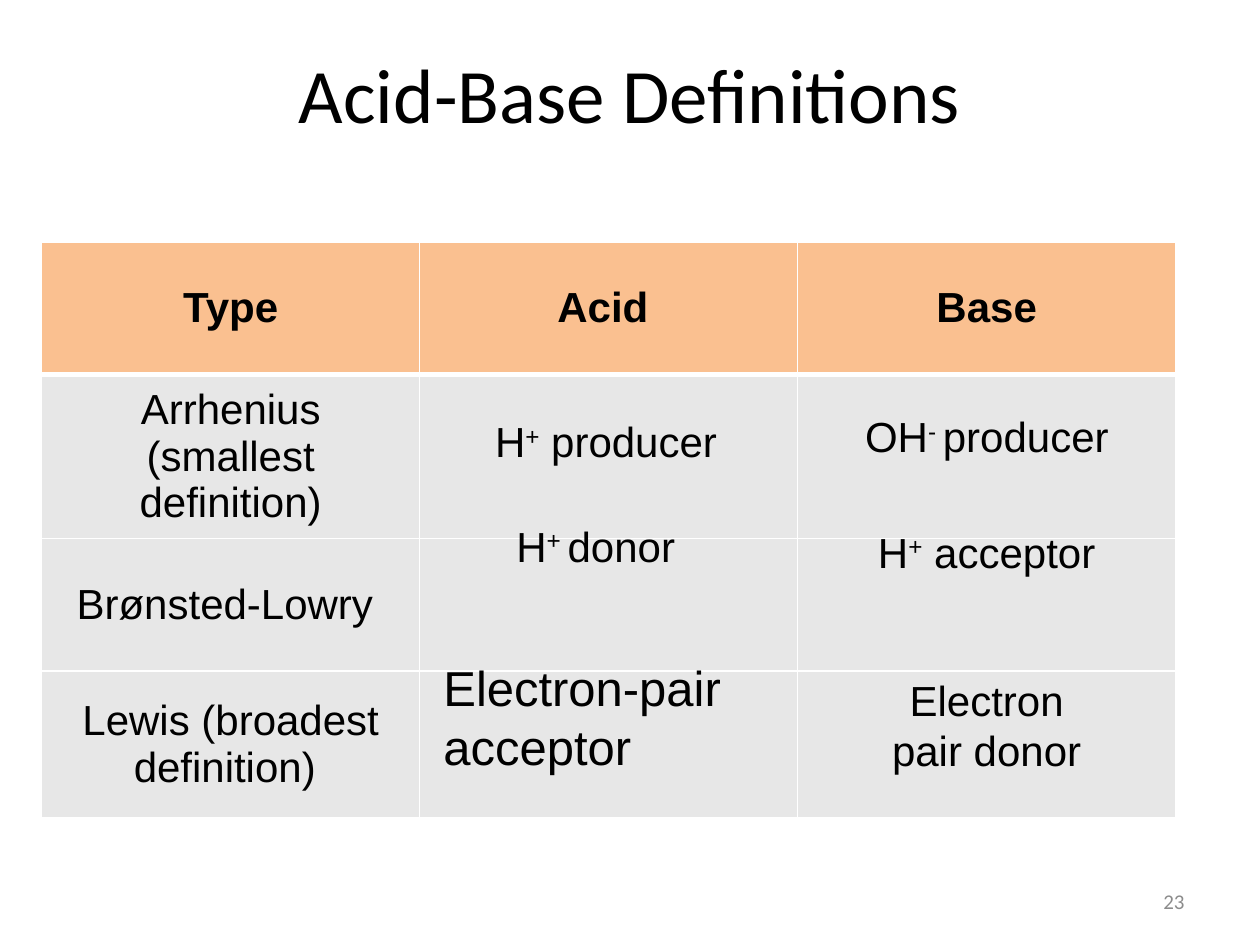
from lxml.etree import SubElement
from pptx import Presentation
from pptx.dml.color import RGBColor as RGB
from pptx.enum.text import MSO_ANCHOR as ANCHOR, PP_ALIGN as ALIGN
from pptx.oxml.ns import qn
from pptx.util import Cm, Pt

COLORS = {
    "text": "000000",
    "header": "FAC090",
    "body": "E7E7E7",
    "border": "FFFFFF",
    "number": "8C8C8C",
}
HEADERS = ["Type", "Acid ", "Base"]
TYPES = ["Arrhenius (smallest definition)", "Brønsted-Lowry ",
         "Lewis (broadest definition) "]
COL_W = 7.62
ROW_HEIGHTS = [2.67, 2.67, 2.67, 2.97]

# Text, (left, top, width, height) from the table corner, format;
# the parts between ^ marks are superscript
DEFINITIONS = [
    ("H^+^ producer", (8.89, 3.38, 5.08, 1.27), {"align": ALIGN.LEFT}),
    ("H^+ ^donor", (9.32, 5.49, 5.08, 1.27), {"align": ALIGN.LEFT}),
    ("Electron-pair acceptor", (7.85, 8.26, 7.19, 2.64),
     {"align": ALIGN.LEFT, "size": 28}),
    ("OH^- ^producer", (15.98, 3.28, 6.15, 1.27), {}),
    ("H^+^ acceptor", (16.51, 5.61, 5.08, 1.27), {}),
    ("Electron pair donor", (16.51, 8.59, 5.08, 2.31), {}),
]


def write(tf, text, size=24, font="Arial", color="text", bold=False,
          align=ALIGN.CENTER):
    p = tf.paragraphs[0]
    p.alignment = align
    for i, part in enumerate(text.split("^")):
        r = p.add_run()
        r.text = part
        r.font.size, r.font.name, r.font.bold = Pt(size), font, bold
        r.font.color.rgb = RGB.from_string(COLORS[color])
        if i % 2:
            r.font._element.set("baseline", "30000")


def add_text(slide, box, text, anchor=ANCHOR.TOP, **fmt):
    tf = slide.shapes.add_textbox(*map(Cm, box)).text_frame
    tf.word_wrap = True
    tf.vertical_anchor = anchor
    write(tf, text, **fmt)


def set_borders(cell, top, bottom):
    tcPr = cell._tc.get_or_add_tcPr()
    for side, width in (("L", 1), ("R", 1), ("T", top), ("B", bottom)):
        ln = SubElement(tcPr, qn(f"a:ln{side}"), w=str(Pt(width)))
        fill = SubElement(ln, qn("a:solidFill"))
        SubElement(fill, qn("a:srgbClr"), val=COLORS["border"])


def add_definition_table(slide, left, top):
    rows = [HEADERS] + [[name, "", ""] for name in TYPES]
    table = slide.shapes.add_table(
        len(rows), len(HEADERS), Cm(left), Cm(top),
        Cm(COL_W * len(HEADERS)), Cm(sum(ROW_HEIGHTS))).table
    for col in table.columns:
        col.width = Cm(COL_W)
    for i, (row, height) in enumerate(zip(rows, ROW_HEIGHTS)):
        table.rows[i].height = Cm(height)
        for j, text in enumerate(row):
            cell = table.cell(i, j)
            cell.vertical_anchor = ANCHOR.MIDDLE
            # A thick rule separates the header from the body
            set_borders(cell, 3 if i == 1 else 1, 3 if i == 0 else 1)
            cell.fill.solid()
            cell.fill.fore_color.rgb = RGB.from_string(
                COLORS["body" if i else "header"])
            if text:
                write(cell.text_frame, text, bold=i == 0)

    # Acid and base definitions lie over the empty cells
    for text, (x, y, w, h), fmt in DEFINITIONS:
        add_text(slide, (left + x, top + y, w, h), text, **fmt)


def main():
    prs = Presentation()
    prs.slide_width, prs.slide_height = Cm(25.4), Cm(19.05)
    slide = prs.slides.add_slide(prs.slide_layouts[6])

    # Title
    add_text(slide, (1.27, 0.76, 22.86, 2.21), "Acid-Base Definitions",
             anchor=ANCHOR.MIDDLE, size=44, font="Calibri")
    # Table
    add_definition_table(slide, 0.84, 4.88)
    # Slide number
    add_text(slide, (18.21, 17.65, 5.92, 1.02), "23", anchor=ANCHOR.MIDDLE,
             size=12, font="Calibri", color="number", align=ALIGN.RIGHT)

    prs.save("out.pptx")


if __name__ == "__main__":
    main()
